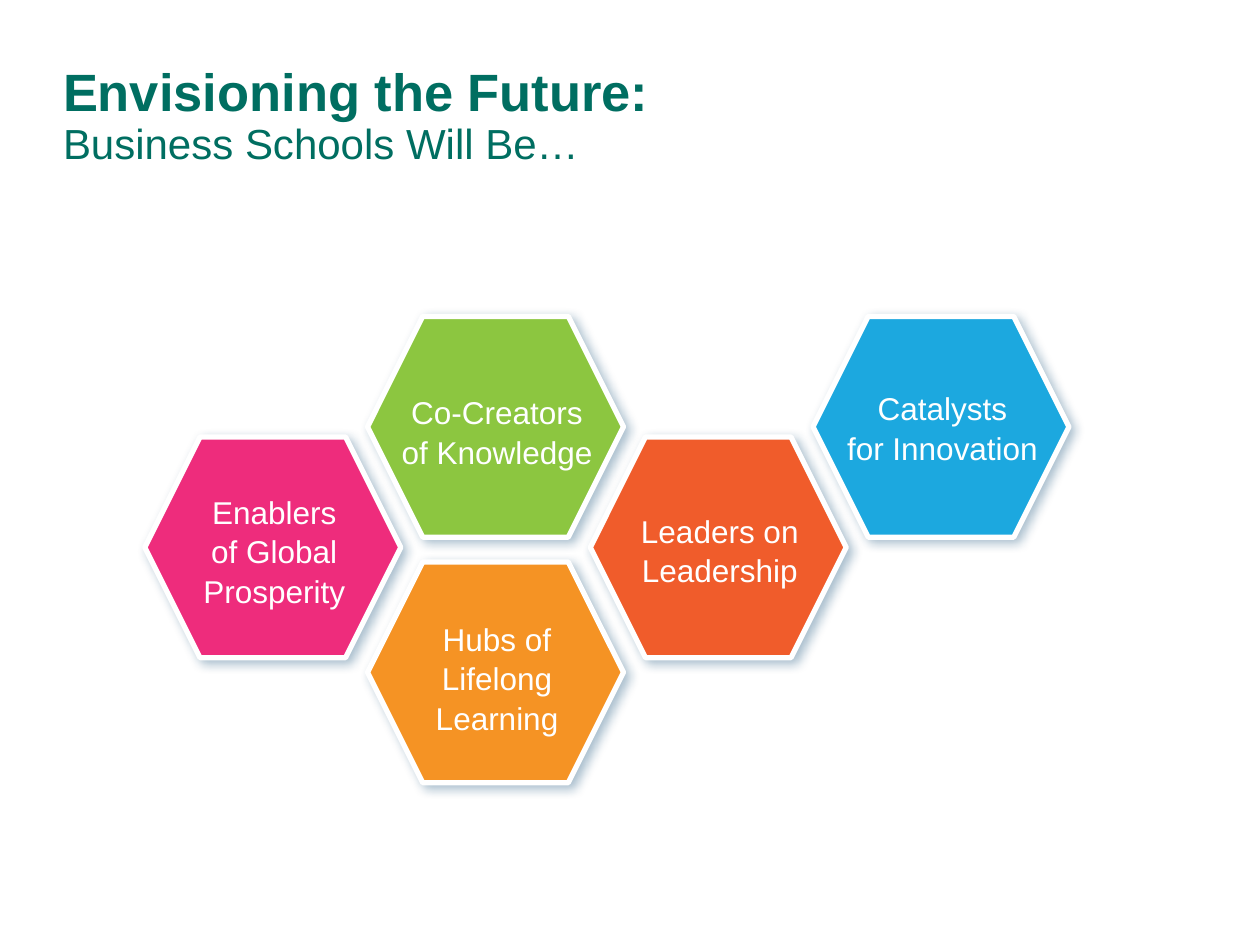
from dataclasses import dataclass

from lxml import etree
from pptx import Presentation
from pptx import util as u
from pptx.dml.color import RGBColor
from pptx.enum import shapes, text
from pptx.oxml import parse_xml
from pptx.oxml.ns import nsdecls, qn


@dataclass(frozen=True)
class Theme:
    font: str = "Arial"
    heading: str = "006E61"
    white: str = "FFFFFF"
    shadow: str = "0B4772"
    green: str = "8CC640"
    amber: str = "F59324"
    orange: str = "F05C2B"
    pink: str = "EE2C7C"
    blue: str = "1CA8DF"
    title_size: int = 30
    subtitle_size: int = 24
    label_size: int = 18


THEME = Theme()
HEX_WIDTH, HEX_HEIGHT = 5.16, 4.45
FIRST_COLUMN, COLUMN_STEP = 2.92, 4.49
UPPER, MIDDLE, LOWER = 6.38, 8.81, 11.33
LABEL_WIDTH = 9.12

# column, row top, fill, label top, label width, label lines
ROLES = [
    (1, UPPER, THEME.green, 7.9, LABEL_WIDTH, ["Co-Creators", "of Knowledge"]),
    (1, LOWER, THEME.amber, 12.47, LABEL_WIDTH, ["Hubs of", "Lifelong", "Learning"]),
    (2, MIDDLE, THEME.orange, 10.29, LABEL_WIDTH, ["Leaders on", "Leadership"]),
    (0, MIDDLE, THEME.pink, 9.91, 11.86, ["Enablers", "of Global", "Prosperity"]),
    (3, UPPER, THEME.blue, 7.82, LABEL_WIDTH, ["Catalysts", "for Innovation"]),
]


class SlideBuilder:
    def __init__(self, slide, theme):
        self.slide = slide
        self.theme = theme
        self.honeycomb = slide.shapes.add_group_shape()

    def write_lines(self, paragraph, lines, color):
        """Add (words, size, bold) runs, each on its own line of one paragraph."""
        for index, (words, size, bold) in enumerate(lines):
            if index:
                line_break = paragraph._p.add_br()
                previous_size = lines[index - 1][1]
                etree.SubElement(line_break, qn("a:rPr"), sz=str(previous_size * 100))
            run = paragraph.add_run()
            run.text = words
            run.font.name = self.theme.font
            run.font.size = u.Pt(size)
            run.font.bold = bold
            run.font.color.rgb = RGBColor.from_string(color)

    def clear_margins(self, frame):
        frame.margin_left = frame.margin_right = 0
        frame.margin_top = frame.margin_bottom = 0
        frame.word_wrap = True

    def title(self, heading, subheading):
        title = self.slide.shapes.title
        title.left, title.top = u.Cm(1.27), u.Cm(0)
        title.width, title.height = u.Cm(22.86), u.Cm(3.4)
        frame = title.text_frame
        self.clear_margins(frame)
        frame.auto_size = text.MSO_AUTO_SIZE.NONE
        frame.vertical_anchor = text.MSO_ANCHOR.BOTTOM
        paragraph = frame.paragraphs[0]
        paragraph.alignment = text.PP_ALIGN.LEFT
        paragraph.line_spacing = 0.9
        self.write_lines(paragraph, [
            (heading, self.theme.title_size, True),
            (subheading, self.theme.subtitle_size, False),
        ], self.theme.heading)

    def hexagon(self, left, top, fill):
        cell = self.honeycomb.shapes.add_shape(
            shapes.MSO_SHAPE.HEXAGON,
            u.Cm(left), u.Cm(top), u.Cm(HEX_WIDTH), u.Cm(HEX_HEIGHT))
        cell.fill.solid()
        cell.fill.fore_color.rgb = RGBColor.from_string(fill)
        cell.line.color.rgb = RGBColor.from_string(self.theme.white)
        cell.line.width = u.Pt(3)
        self.soft_shadow(cell)

    def soft_shadow(self, shape):
        """Cast a blurred shadow down and to the right at 45 degrees."""
        shape.shadow.inherit = False
        effects = shape._element.spPr.find(qn("a:effectLst"))
        effects.append(parse_xml(
            f'<a:outerShdw {nsdecls("a")} blurRad="{u.Pt(6)}" dist="{u.Pt(3)}" '
            f'dir="2700000" algn="tl" rotWithShape="0">'
            f'<a:srgbClr val="{self.theme.shadow}"><a:alpha val="35000"/></a:srgbClr>'
            f'</a:outerShdw>'))

    def label(self, center, top, width, lines):
        size = self.theme.label_size
        box = self.honeycomb.shapes.add_textbox(
            u.Cm(center - width / 2), u.Cm(top), u.Cm(width), u.Cm(0.77 * len(lines)))
        frame = box.text_frame
        self.clear_margins(frame)
        frame.auto_size = text.MSO_AUTO_SIZE.SHAPE_TO_FIT_TEXT
        paragraph = frame.paragraphs[0]
        paragraph.alignment = text.PP_ALIGN.CENTER
        paragraph.line_spacing = 1.04
        self.write_lines(paragraph, [(line, size, False) for line in lines],
                         self.theme.white)


def main():
    deck = Presentation()
    deck.slide_width, deck.slide_height = u.Cm(25.4), u.Cm(19.05)
    builder = SlideBuilder(deck.slides.add_slide(deck.slide_layouts[5]), THEME)
    builder.title("Envisioning the Future:", "Business Schools Will Be…")
    for column, row_top, fill, *_ in ROLES:
        builder.hexagon(FIRST_COLUMN + column * COLUMN_STEP, row_top, fill)
    for column, _, _, label_top, width, lines in ROLES:
        center = FIRST_COLUMN + column * COLUMN_STEP + HEX_WIDTH / 2 + 0.03
        builder.label(center, label_top, width, lines)
    deck.save("out.pptx")


if __name__ == "__main__":
    main()
